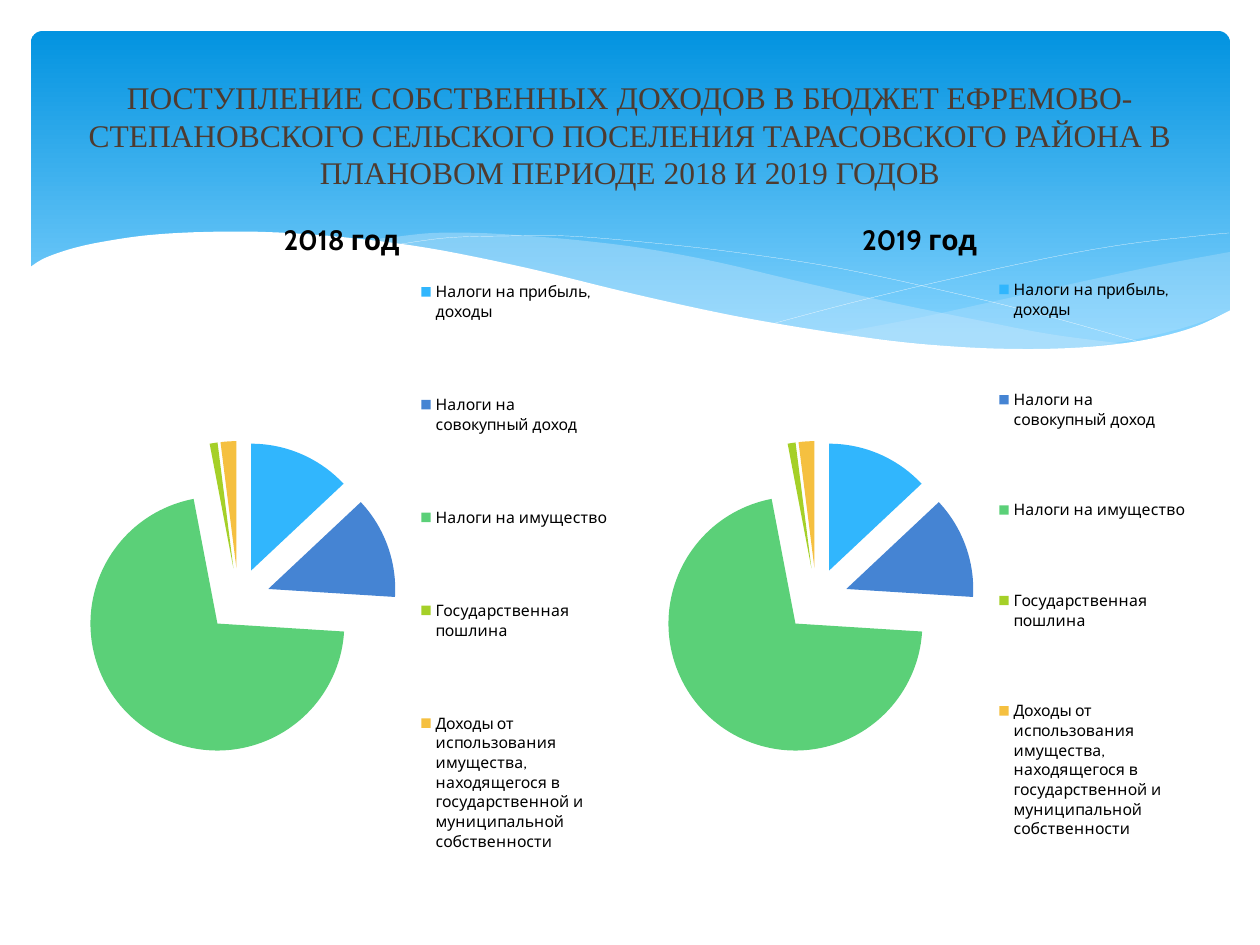
from lxml.etree import SubElement
from pptx import Presentation
from pptx.chart.data import CategoryChartData
from pptx.dml.color import RGBColor
from pptx.enum.chart import XL_CHART_TYPE, XL_LEGEND_POSITION
from pptx.enum.shapes import MSO_SHAPE
from pptx.enum.text import MSO_ANCHOR, MSO_AUTO_SIZE, PP_ALIGN
from pptx.oxml import parse_xml
from pptx.oxml.ns import nsdecls, qn
from pptx.util import Pt

PX = 914400 / 126
COLORS = {
    "sky_top": "0293E0", "sky_bottom": "83D3FE", "wave": "C6E7FC",
    "white": "FFFFFF", "title": "4E3B30", "text": "000000",
}
SLICES = ["31B6FD", "4584D3", "5BD078", "A5D028", "F5C040"]
CATEGORIES = [
    "Налоги на прибыль, доходы",
    "Налоги на совокупный доход",
    "Налоги на имущество",
    "Государственная пошлина",
    "Доходы от использования имущества, находящегося в "
    "государственной и муниципальной собственности",
]
# Year, shares of income, legend height as a share of the chart
INCOME = [
    ("2018 год", [13, 13, 71, 1, 2], 0.97),
    ("2019 год", [13, 13, 71, 1, 2], 0.95),
]
TITLE = ("ПОСТУПЛЕНИЕ СОБСТВЕННЫХ ДОХОДОВ В БЮДЖЕТ ЕФРЕМОВО-СТЕПАНОВСКОГО "
         "СЕЛЬСКОГО ПОСЕЛЕНИЯ ТАРАСОВСКОГО РАЙОНА В ПЛАНОВОМ ПЕРИОДЕ "
         "2018 И 2019 ГОДОВ")

# Wave edges: smooth curves through these points, in px
RIGHT_WAVE = [
    [(833, 334), (918, 318), (1009, 298), (1085, 281), (1160, 265), (1230, 252)],
    [(1230, 311), (1196, 324), (1160, 334), (1121, 342), (1076, 348),
     (1024, 350), (968, 348), (906, 342), (833, 334)],
]
MIDDLE_WAVE = [
    [(360, 241), (394, 237), (433, 233), (479, 233), (529, 236), (586, 241),
     (648, 249), (717, 262), (793, 280), (889, 302), (977, 320), (1049, 334),
     (1125, 344)],
    [(1125, 344), (1092, 347), (1056, 349), (1017, 350), (974, 349), (926, 346),
     (876, 340), (819, 333), (757, 323), (668, 306), (566, 280), (509, 267),
     (457, 256), (407, 247), (360, 241)],
]
FALLING_LINE = [
    [(389, 246), (445, 238), (505, 236), (567, 236), (643, 242), (733, 252),
     (838, 268), (958, 294), (1047, 316), (1143, 343)],
]
RISING_LINE = [
    [(772, 324), (847, 304), (942, 281), (1053, 257), (1128, 244), (1198, 236),
     (1229, 233)],
]
FRONT_WAVE = [
    [(29, 268), (45, 258), (74, 248), (107, 241), (150, 235), (203, 232),
     (266, 232), (341, 237), (428, 248), (527, 268), (634, 294), (730, 315),
     (816, 330), (893, 341), (961, 347), (1019, 349), (1071, 348), (1118, 344),
     (1159, 337), (1197, 326), (1231, 310)],
    [(1231, 415), (29, 415)],
]


def emu(*lengths):
    return [round(n * PX) for n in lengths]


def rgb(name):
    return RGBColor.from_string(COLORS.get(name, name))


def smooth(points, steps=6):
    """Catmull-Rom curve through the points."""
    ends = [points[0], *points, points[-1]]
    curve = [points[0]]
    for a, b, c, d in zip(ends, ends[1:], ends[2:], ends[3:]):
        for t in (i / steps for i in range(1, steps + 1)):
            curve.append(tuple(
                (2 * q + (r - p) * t + (2 * p - 5 * q + 4 * r - s) * t ** 2
                 + (3 * q - p - 3 * r + s) * t ** 3) / 2
                for p, q, r, s in zip(a, b, c, d)))
    return curve


class Deck:
    def __init__(self, width, height, font="Cabin", title_font="Times New Roman"):
        self.prs = Presentation()
        self.prs.slide_width, self.prs.slide_height = emu(width, height)
        self.font, self.title_font = font, title_font
        self.s = self.prs.slides.add_slide(self.prs.slide_layouts[5])

    def panel(self, x, y, w, h):
        sp = self.s.shapes.add_shape(MSO_SHAPE.ROUNDED_RECTANGLE, *emu(x, y, w, h))
        sp.adjustments[0] = 0.034
        sp.shadow.inherit = False
        sp.line.fill.background()
        sp.fill.gradient()
        sp.fill.gradient_angle = 270
        for stop, pos, name in zip(sp.fill.gradient_stops, (0, 0.9),
                                   ("sky_top", "sky_bottom")):
            stop.position = pos
            stop.color.rgb = rgb(name)

    def wave(self, edges, fill=None, alpha=100):
        points = [emu(*pt) for edge in edges for pt in smooth(edge)]
        builder = self.s.shapes.build_freeform(*points[0])
        builder.add_line_segments(points[1:], close=fill is not None)
        sp = builder.convert_to_shape()
        sp.shadow.inherit = False
        if fill is None:
            sp.fill.background()
            sp.line.color.rgb = rgb("white")
            sp.line.width = Pt(0.1)
            return
        sp.line.fill.background()
        sp.fill.solid()
        sp.fill.fore_color.rgb = rgb(fill)
        if alpha < 100:
            color = sp.fill._xPr.find(".//" + qn("a:srgbClr"))
            SubElement(color, qn("a:alpha"), val=str(alpha * 1000))

    def title(self, text, x, y, w, h):
        sp = self.s.shapes.title
        self.s.shapes._spTree.append(sp._element)  # in front of the waves
        sp.left, sp.top, sp.width, sp.height = emu(x, y, w, h)
        tf = sp.text_frame
        tf.word_wrap, tf.auto_size = True, MSO_AUTO_SIZE.NONE
        tf.vertical_anchor = MSO_ANCHOR.MIDDLE
        p = tf.paragraphs[0]
        p.alignment = PP_ALIGN.CENTER
        r = p.add_run()
        r.text = text
        self.style(r.font, 18, "title", self.title_font)

    def style(self, font, size, color="text", name=None, bold=False):
        font.size, font.bold, font.name = Pt(size), bold, name or self.font
        font.color.rgb = rgb(color)

    def pie(self, name, values, legend_height, x, y, w, h):
        data = CategoryChartData()
        data.categories = CATEGORIES
        data.add_series(name, values)
        chart = self.s.shapes.add_chart(
            XL_CHART_TYPE.PIE, *emu(x, y, w, h), data).chart
        self.style(chart.font, 9)
        # Title
        chart.has_title = True
        r = chart.chart_title.text_frame.paragraphs[0].add_run()
        r.text = name
        self.style(r.font, 16, bold=True)
        # Legend
        chart.has_legend = True
        chart.legend.position = XL_LEGEND_POSITION.RIGHT
        chart.legend.include_in_layout = False
        # Slices
        plot = chart.plots[0]
        plot.vary_by_categories = True
        series = plot.series[0]
        for i, color in enumerate(SLICES):
            fill = series.points[i].format.fill
            fill.solid()
            fill.fore_color.rgb = rgb(color)
        series._element.find(qn("c:dPt")).addprevious(
            parse_xml(f'<c:explosion {nsdecls("c")} val="25"/>'))
        # Places of plot and legend, as shares of the chart
        self.place(chart._chartSpace.chart.plotArea, 0.03, 0.33, 0.57, 0.44, inner=True)
        self.place(chart.legend._element, 0.64, 0.02, 0.34, legend_height)

    @staticmethod
    def place(element, x, y, w, h, inner=False):
        for old in element.findall(qn("c:layout")):
            element.remove(old)
        target = '<c:layoutTarget val="inner"/>' if inner else ""
        modes = "".join(f'<c:{k}Mode val="edge"/>' for k in "xy")
        sizes = "".join(f'<c:{k} val="{v}"/>' for k, v in zip("xywh", (x, y, w, h)))
        layout = parse_xml(f'<c:layout {nsdecls("c")}><c:manualLayout>{target}'
                           f'{modes}{sizes}</c:manualLayout></c:layout>')
        position = element.find(qn("c:legendPos"))
        if position is None:
            element.insert(0, layout)
        else:
            position.addnext(layout)


def main():
    deck = Deck(1260, 945)
    # Sky and waves
    deck.panel(31, 31, 1199, 340)
    deck.wave(RIGHT_WAVE, "wave", 29)
    deck.wave(MIDDLE_WAVE, "wave", 40)
    deck.wave(FALLING_LINE)
    deck.wave(RISING_LINE)
    deck.wave(FRONT_WAVE, "white")
    # Title and one pie per year
    deck.title(TITLE, 63, 65, 1134, 139)
    for i, (year, values, legend_height) in enumerate(INCOME):
        deck.pie(year, values, legend_height, 63 + 578 * i, 194, 557, 738)
    deck.prs.save("out.pptx")


if __name__ == "__main__":
    main()
